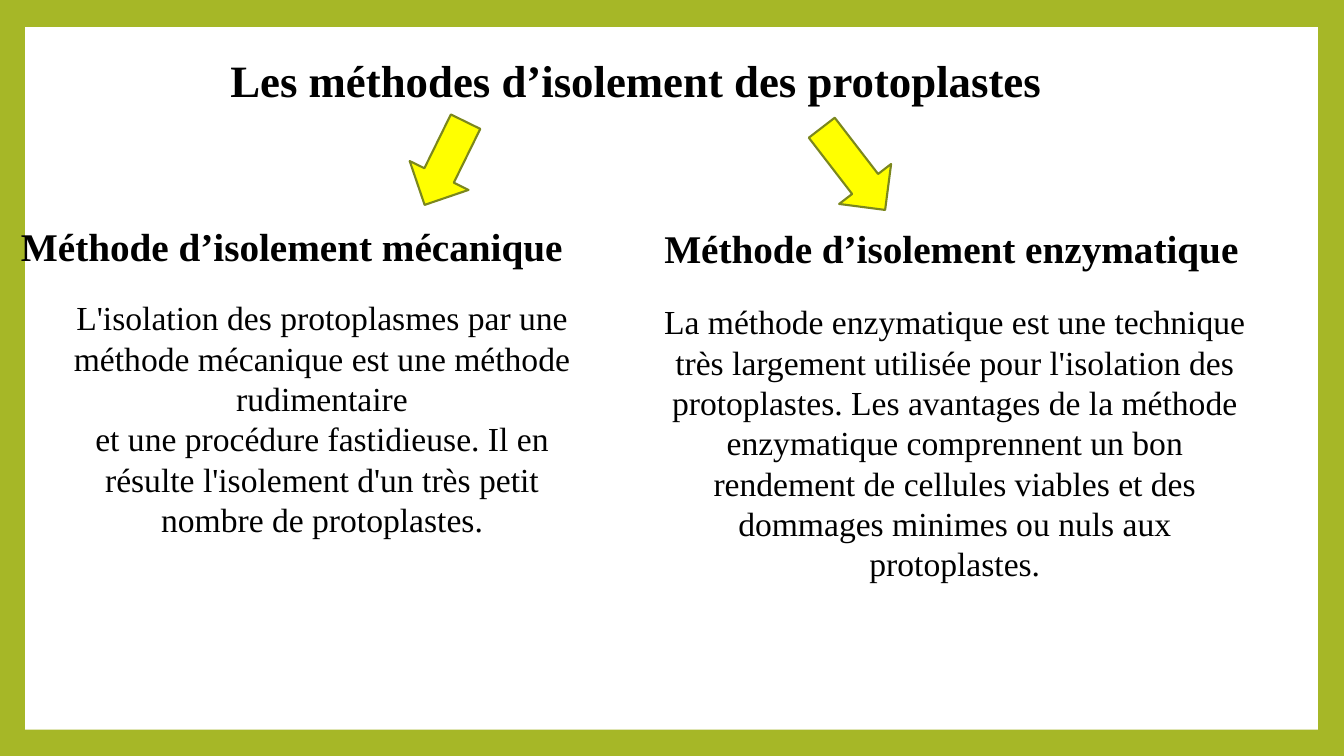
import pptx
import pptx.util
import pptx.dml.color
import pptx.enum.shapes
import pptx.enum.text

Inches, Pt = pptx.util.Inches, pptx.util.Pt
ALIGN = pptx.enum.text.PP_ALIGN
SHAPE = pptx.enum.shapes.MSO_SHAPE

COLORS = {"border": "A6B727", "panel": "FFFFFF", "text": "000000",
          "arrow": "FFFF00", "arrow_line": "7B871D"}
FORMATS = {
    "title": {"size": Pt(32), "bold": True},
    "heading": {"size": Pt(28), "bold": True},
    "body": {"size": Pt(24), "bold": False},
}
PANEL = (0.25, 0.27, 12.82, 6.97)
TITLE = ("Les méthodes d’isolement des protoplastes ", (2.07, 0.47, 8.59, 0.64))
METHODS = [
    {"heading": "Méthode d’isolement mécanique",
     "heading_box": (0.11, 2.16, 6.17, 0.57),
     "body": ["L'isolation des protoplasmes par une méthode mécanique est une "
              "méthode rudimentaire",
              "et une procédure fastidieuse. Il en résulte l'isolement d'un très "
              "petit nombre de protoplastes."],
     "body_box": (0.48, 2.9, 5.43, 2.52),
     "arrow_box": (4.09, 1.16, 0.65, 0.92), "rotation": 26.2},
    {"heading": "Méthode d’isolement enzymatique",
     "heading_box": (6.49, 2.18, 6.17, 0.57),
     "body": ["La méthode enzymatique est une technique très largement utilisée "
              "pour l'isolation des protoplastes. Les avantages de la méthode "
              "enzymatique comprennent un bon rendement de cellules viables et des "
              "dommages minimes ou nuls aux protoplastes."],
     "body_box": (6.45, 2.94, 6.04, 2.93),
     "arrow_box": (8.14, 1.16, 0.65, 1.03), "rotation": 322.4},
]


def rgb(name):
    return pptx.dml.color.RGBColor.from_string(COLORS[name])


def inches(box):
    return [Inches(v) for v in box]


def write(sp, lines, style, align, spacing=None):
    tf = sp.text_frame
    tf.word_wrap = True
    tf.auto_size = pptx.enum.text.MSO_AUTO_SIZE.NONE
    tf.vertical_anchor = pptx.enum.text.MSO_ANCHOR.TOP
    for i, line in enumerate(lines):
        p = tf.add_paragraph() if i else tf.paragraphs[0]
        p.alignment = align
        p.space_before = Pt(0)
        p.line_spacing = spacing
        r = p.add_run()
        r.text = line
        r.font.name = "Times New Roman"
        r.font.color.rgb = rgb("text")
        for key, value in FORMATS[style].items():
            setattr(r.font, key, value)


def add_filled(s, kind, box, fill, line=None):
    sp = s.shapes.add_shape(kind, *inches(box))
    sp.shadow.inherit = False
    sp.fill.solid()
    sp.fill.fore_color.rgb = rgb(fill)
    if line:
        sp.line.color.rgb = rgb(line)
        sp.line.width = Pt(1.5)
    else:
        sp.line.fill.background()
    return sp


def main():
    prs = pptx.Presentation()
    prs.slide_width, prs.slide_height = Inches(13.33), Inches(7.5)
    s = prs.slides.add_slide(prs.slide_layouts.get_by_name("Title Only"))
    s.background.fill.solid()
    s.background.fill.fore_color.rgb = rgb("border")

    panel = add_filled(s, SHAPE.RECTANGLE, PANEL, "panel")
    title = s.shapes.title
    title.element.addprevious(panel.element)
    text, box = TITLE
    title.left, title.top, title.width, title.height = inches(box)
    write(title, [text], "title", ALIGN.CENTER)

    for m in METHODS:
        heading = s.shapes.add_textbox(*inches(m["heading_box"]))
        write(heading, [m["heading"]], "heading", ALIGN.LEFT)
        body = s.shapes.add_textbox(*inches(m["body_box"]))
        write(body, m["body"], "body", ALIGN.CENTER, Pt(28.8))
        arrow = add_filled(s, SHAPE.DOWN_ARROW, m["arrow_box"], "arrow", "arrow_line")
        arrow.rotation = m["rotation"]

    prs.save("out.pptx")


if __name__ == "__main__":
    main()
